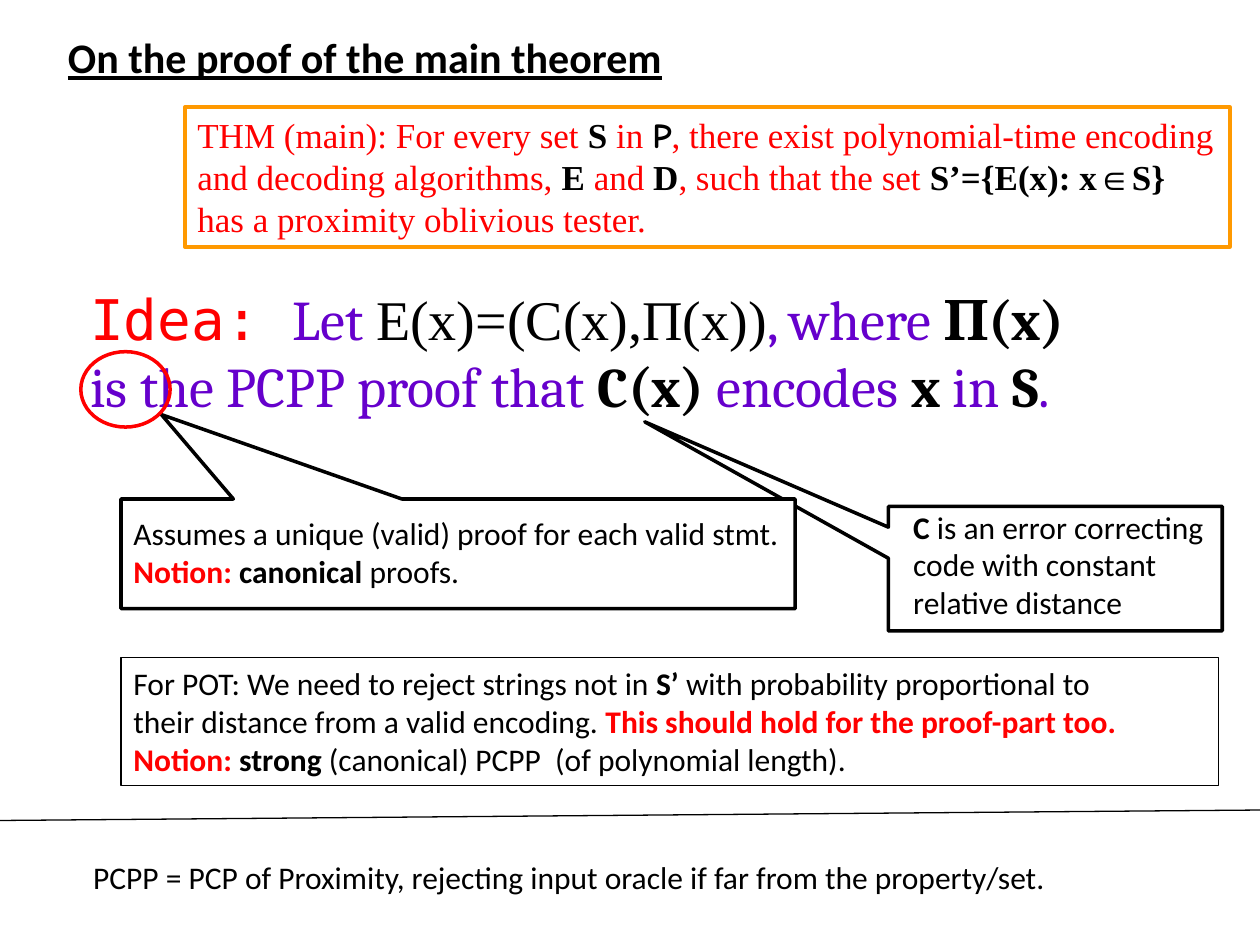
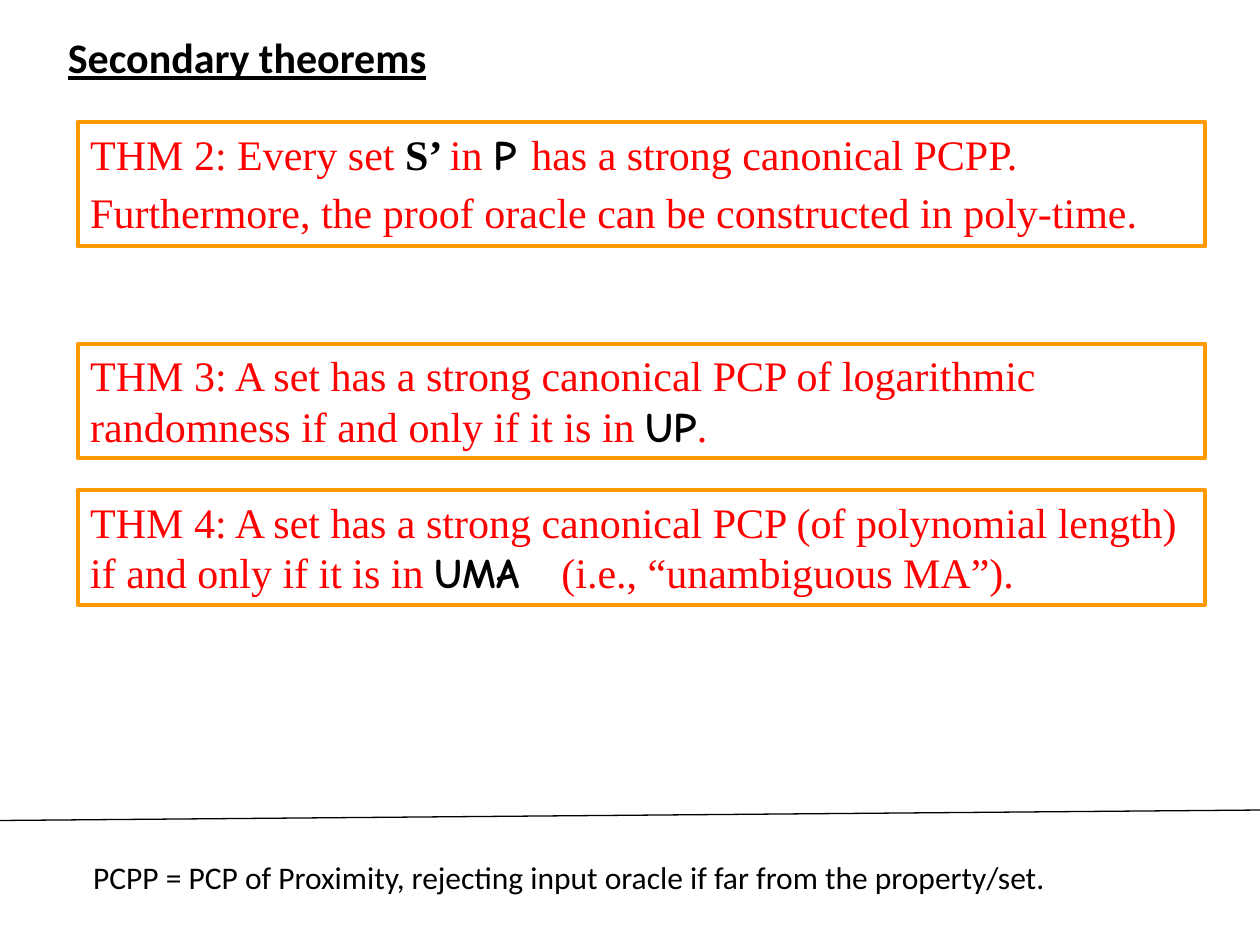
import dataclasses

import lxml.etree
import pptx
import pptx.dml.color
import pptx.enum.shapes
import pptx.enum.text
import pptx.oxml.ns
import pptx.util

Cm = pptx.util.Cm
Pt = pptx.util.Pt
qn = pptx.oxml.ns.qn
Kind = pptx.enum.shapes.MSO_SHAPE


@dataclasses.dataclass(frozen=True)
class Theme:
    black: str = "000000"
    white: str = "FFFFFF"
    red: str = "FF0000"
    gold: str = "FF9900"
    violet: str = "6600CC"
    sans: str = "Calibri"
    serif: str = "Times New Roman"
    book: str = "Cambria"
    comic: str = "Comic Neue"
    mono: str = "DejaVu Sans Mono"
    small: int = 18
    mid: int = 20
    large: int = 24
    huge: int = 32
    thin: float = 0.75
    firm: float = 2
    thick: float = 2.25

    def look(self, name):
        return {
            "plain": (self.sans, self.black, False),
            "bold": (self.sans, self.black, True),
            "alert": (self.sans, self.red, True),
            "claim": (self.serif, self.red, False),
            "term": (self.serif, self.black, True),
            "math": (self.serif, self.black, False),
            "class": (self.comic, self.black, True),
            "label": (self.mono, self.red, False),
            "idea": (self.book, self.violet, False),
            "sign": (self.book, self.black, True),
        }[name]


THEME = Theme()


def tint(code):
    return pptx.dml.color.RGBColor.from_string(code)


def fill_para(para, parts, size):
    para.text = "\v".join(text for _, text in parts)
    seams = [mark for mark in para._p.findall(qn("a:br"))
             if mark.getprevious().tag != mark.tag]
    for seam in seams:
        para._p.remove(seam)
    for run, (name, _) in zip(para.runs, parts):
        face, code, bold = THEME.look(name)
        run.font.name = face
        run.font.size = Pt(size)
        run.font.bold = bold
        run.font.color.rgb = tint(code)


def fill_frame(frame, paras, size, gap=0):
    frame.word_wrap = True
    frame.vertical_anchor = pptx.enum.text.MSO_ANCHOR.TOP
    for i, parts in enumerate(paras):
        para = frame.add_paragraph() if i else frame.paragraphs[0]
        para.alignment = pptx.enum.text.PP_ALIGN.LEFT
        para.space_before = Pt(gap)
        fill_para(para, parts, size)


def add_text(slide, box, paras, size=THEME.small):
    frame = slide.shapes.add_textbox(*map(Cm, box)).text_frame
    fill_frame(frame, paras, size)
    return frame


def add_form(slide, kind, box, edge, width, fill=None):
    form = slide.shapes.add_shape(kind, *map(Cm, box))
    form.shadow.inherit = False
    if fill:
        form.fill.solid()
        form.fill.fore_color.rgb = tint(fill)
    else:
        form.fill.background()
    form.line.color.rgb = tint(edge)
    form.line.width = Pt(width)
    return form


def add_claim(slide, box, paras, size):
    form = add_form(slide, Kind.RECTANGLE, box, THEME.gold, THEME.thick)
    fill_frame(form.text_frame, paras, size, gap=size * 0.2)
    return form.text_frame


def add_bubble(slide, box, tip, shift, paras):
    form = add_form(slide, Kind.RECTANGULAR_CALLOUT, box,
                    THEME.black, THEME.firm, THEME.white)
    form.adjustments[0], form.adjustments[1] = tip
    left, top, width, height = box
    right, down = shift
    add_text(slide, (left + right, top + down, width - right, height), paras)


def add_title(slide, box, text):
    frame = add_text(slide, box, [[("bold", text)]], THEME.large)
    frame.vertical_anchor = pptx.enum.text.MSO_ANCHOR.MIDDLE
    frame.paragraphs[0].runs[0].font.underline = True


def add_foot(slide, box):
    left, top, width, height = box
    rule = slide.shapes.add_connector(
        pptx.enum.shapes.MSO_CONNECTOR.STRAIGHT,
        Cm(left), Cm(top + 0.21), Cm(left + width), Cm(top))
    rule.line.color.rgb = tint(THEME.black)
    rule.line.width = Pt(THEME.thin)
    lxml.etree.SubElement(rule._element.spPr, qn("a:effectLst"))
    add_text(slide, (left + 1.63, top + 0.84, width - 1.75, 1.02), [[
        ("plain", "PCPP = PCP of Proximity, rejecting input oracle "
                  "if far from the property/set.")]])


def add_page(deck, title):
    slide = deck.slides.add_slide(deck.slide_layouts[6])
    add_title(slide, (1.12, 0.38, 22.38, 1.52), title)
    add_foot(slide, (0, 16.33, 25.4, 2.72))
    return slide


def add_idea(slide, box):
    left, top, _, _ = box
    add_text(slide, box, [[
        ("label", "Idea: "), ("idea", "Let "), ("math", "E(x)=(C(x),Π(x))"),
        ("idea", ", where "), ("sign", "Π(x) "),
        ("idea", "is the PCPP proof that "), ("sign", "C(x)"),
        ("idea", " encodes "), ("sign", "x"), ("idea", " in "),
        ("sign", "S"), ("idea", ".")]], THEME.huge)
    add_form(slide, Kind.OVAL, (left + 0.06, top + 1.48, 1.8, 1.52),
             THEME.red, THEME.firm)


def add_need(slide, box):
    form = add_form(slide, Kind.RECTANGLE, box, THEME.black, THEME.thin)
    fill_frame(form.text_frame, [
        [("plain", "For POT: We need to reject strings not in "),
         ("bold", "S’ "),
         ("plain", "with probability proportional to \v"),
         ("plain", "their distance from a valid encoding. "),
         ("alert", "This should hold for the proof-part too.")],
        [("alert", "Notion: "), ("bold", "strong"),
         ("plain", " (canonical) PCPP  (of polynomial length).")],
    ], THEME.small)


def main_page(deck):
    slide = add_page(deck, "On the proof of the main theorem")
    add_bubble(slide, (17.91, 10.21, 6.73, 2.51), (-1.23, -1.18),
               (0.25, -0.1), [[
                   ("bold", "C"),
                   ("plain", " is an error correcting code with constant "
                             "relative distance")]])
    add_bubble(slide, (2.44, 10.06, 13.59, 2.21), (-0.44, -1.27),
               (0, 0.18), [
                   [("plain", "Assumes a unique (valid) proof for each "
                              "valid stmt.")],
                   [("alert", "Notion: "), ("bold", "canonical"),
                    ("plain", " proofs.")]])
    add_claim(slide, (3.73, 2.16, 21.06, 2.82), [[
        ("claim", "THM (main): For every set "), ("term", "S "),
        ("claim", "in "), ("class", "P"),
        ("claim", ", there exist polynomial-time encoding and decoding "
                  "algorithms, "),
        ("term", "E "), ("claim", "and "), ("term", "D"),
        ("claim", ", such that the set "), ("term", "S’={E(x): x∈S} "),
        ("claim", "has a proximity oblivious tester.")]], THEME.mid)
    add_idea(slide, (1.57, 5.61, 20.19, 3))
    add_need(slide, (2.44, 13.26, 22.12, 2.57))


def more_page(deck):
    slide = add_page(deck, "Secondary theorems")
    claims = [
        (2.46, 2.51, [
            [("claim", "THM 2: Every set "), ("term", "S’ "),
             ("claim", "in "), ("class", "P "),
             ("claim", "has a strong canonical PCPP.")],
            [("claim", "Furthermore, the proof oracle can be constructed "
                       "in poly-time.")]]),
        (6.93, 2.31, [
            [("claim", "THM 3: A set has a strong canonical PCP of "
                       "logarithmic randomness if and only if it is in "),
             ("class", "UP"), ("claim", ".")]]),
        (9.88, 2.31, [
            [("claim", "THM 4: A set has a strong canonical PCP (of "
                       "polynomial length) if and only if it is in "),
             ("class", "UMA\t"),
             ("claim", "(i.e., “unambiguous MA”).")]]),
    ]
    for top, height, paras in claims:
        frame = add_claim(slide, (1.57, top, 22.73, height), paras,
                          THEME.large)
    props = frame.paragraphs[0]._p.get_or_add_pPr()
    stops = lxml.etree.SubElement(props, qn("a:tabLst"))
    lxml.etree.SubElement(stops, qn("a:tab"), pos=str(Cm(9.5)), algn="l")


def main():
    deck = pptx.Presentation()
    deck.slide_width = Cm(25.4)
    deck.slide_height = Cm(19.05)
    main_page(deck)
    more_page(deck)
    deck.save("out.pptx")


if __name__ == "__main__":
    main()
